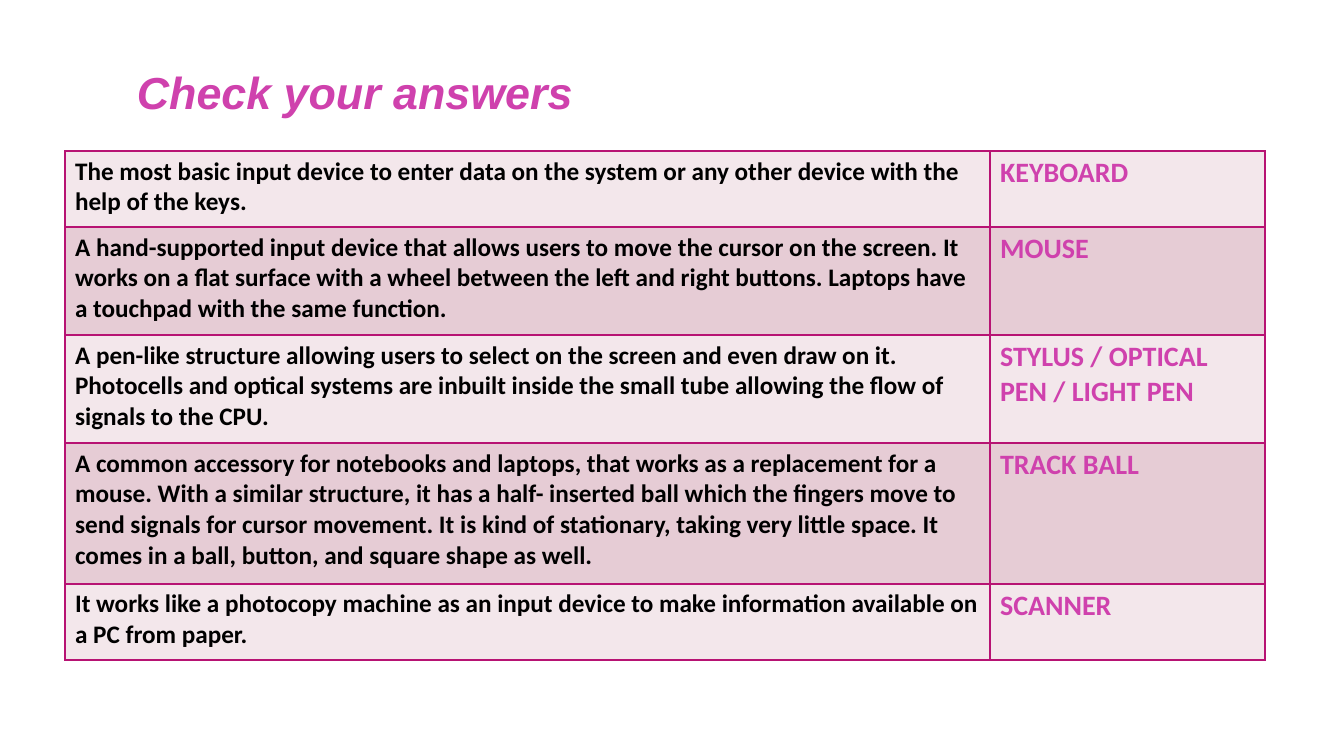
import pptx
import pptx.dml.color
import pptx.enum.text
import pptx.oxml
import pptx.oxml.ns
import pptx.util

# Content
TITLE = "Check your answers"
ANSWERS = [
    ("The most basic input device to enter data on the system or any other device "
     "with the help of the keys.", "KEYBOARD"),
    ("A hand-supported input device that allows users to move the cursor on the screen. "
     "It works on a flat surface with a wheel between the left and right buttons. "
     "Laptops have a touchpad with the same function.", "MOUSE"),
    ("A pen-like structure allowing users to select on the screen and even draw on it. "
     "Photocells and optical systems are inbuilt inside the small tube allowing the flow "
     "of signals to the CPU.", "STYLUS / OPTICAL PEN / LIGHT PEN"),
    ("A common accessory for notebooks and laptops, that works as a replacement for a mouse. "
     "With a similar structure, it has a half- inserted ball which the fingers move to send "
     "signals for cursor movement. It is kind of stationary, taking very little space. "
     "It comes in a ball, button, and square shape as well.", "TRACK BALL"),
    ("It works like a photocopy machine as an input device to make information available "
     "on a PC from paper.", "SCANNER"),
]

# Layout in px
SLIDE = (1344, 756)
TITLE_BOX = (127, 22, 1240, 146)
TABLE_AT = (65, 151)
COLUMNS = (925, 275)
ROWS = (76, 108, 108, 141, 76)

# Formats
PINK, BORDER = "CF41AD", "B71373"
BANDS = ("F3E7EB", "E6CCD5")
TITLE_FONT = dict(name="Arial", size=pptx.util.Pt(32), bold=True, italic=True)
CELL_FONTS = [
    (dict(name="Calibri", size=pptx.util.Pt(18), bold=True), "000000"),
    (dict(name="Calibri", size=pptx.util.Pt(20), bold=True), PINK),
]


def px(n):
    return round(n * 914400 / 100.8)


def rgb(value):
    return pptx.dml.color.RGBColor.from_string(value)


def write(tf, text, font, color):
    tf.word_wrap = True
    r = tf.paragraphs[0].add_run()
    r.text = text
    for key, value in font.items():
        setattr(r.font, key, value)
    r.font.color.rgb = rgb(color)


def add_borders(cell):
    tc_pr = cell._tc.get_or_add_tcPr()
    for i, side in enumerate("LRTB"):
        tc_pr.insert(i, pptx.oxml.parse_xml(
            f'<a:ln{side} {pptx.oxml.ns.nsdecls("a")} w="12700"><a:solidFill>'
            f'<a:srgbClr val="{BORDER}"/></a:solidFill></a:ln{side}>'))


prs = pptx.Presentation()
prs.slide_width, prs.slide_height = map(px, SLIDE)
s = prs.slides.add_slide(prs.slide_layouts[6])

# Title
tf = s.shapes.add_textbox(*map(px, TITLE_BOX)).text_frame
write(tf, TITLE, TITLE_FONT, PINK)
tf.vertical_anchor = pptx.enum.text.MSO_ANCHOR.MIDDLE
tf.paragraphs[0].line_spacing = 0.9

# Answer table
table = s.shapes.add_table(len(ROWS), len(COLUMNS), *map(px, TABLE_AT),
                           px(sum(COLUMNS)), px(sum(ROWS))).table
table.first_row = table.horz_banding = False
for column, width in zip(table.columns, COLUMNS):
    column.width = px(width)
for i, (row, height, texts) in enumerate(zip(table.rows, ROWS, ANSWERS)):
    row.height = px(height)
    for cell, text, (font, color) in zip(row.cells, texts, CELL_FONTS):
        write(cell.text_frame, text, font, color)
        cell.fill.solid()
        cell.fill.fore_color.rgb = rgb(BANDS[i % 2])
        add_borders(cell)

prs.save("out.pptx")
